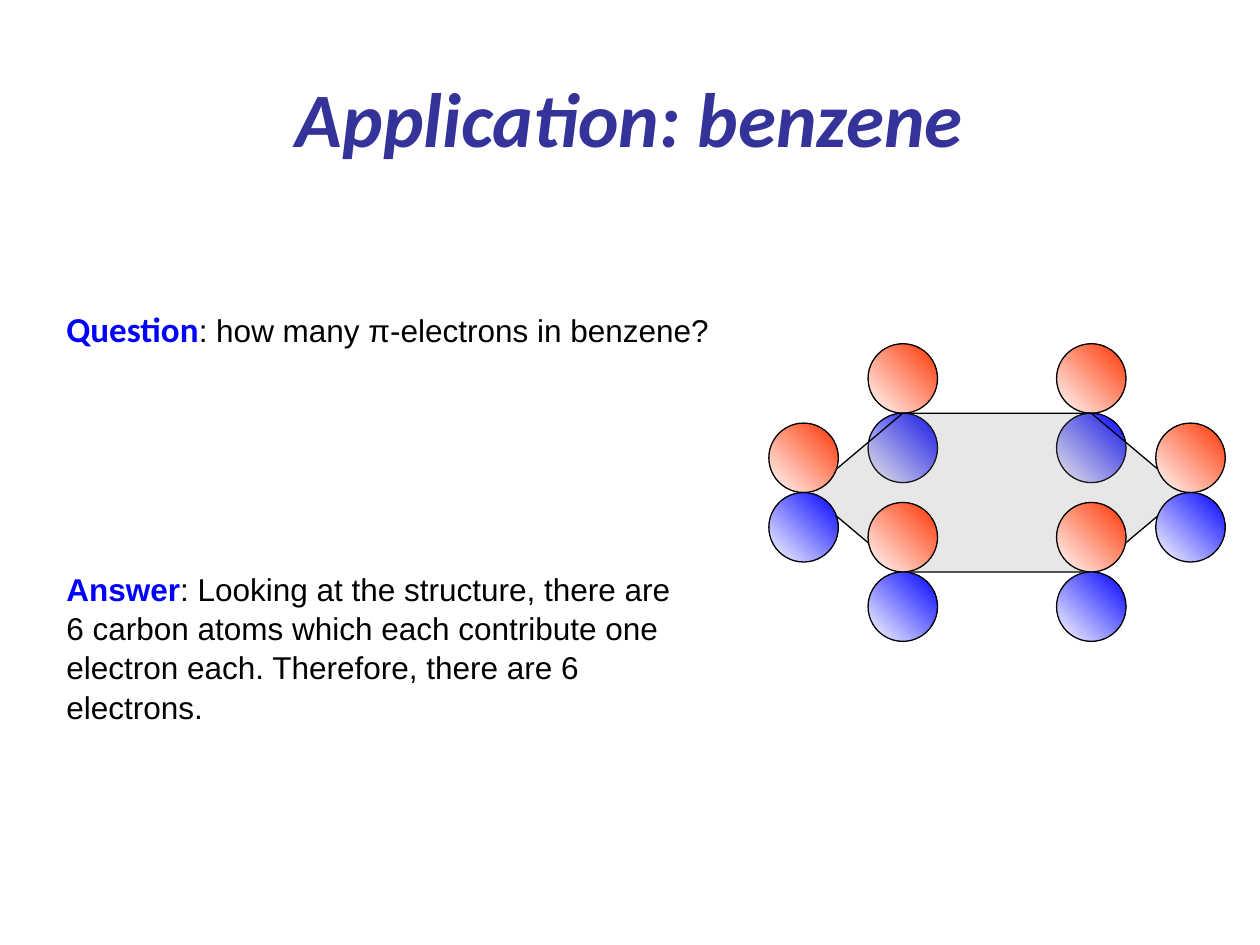
from pptx import Presentation
from pptx.dml.color import RGBColor as RGB
from pptx.enum.shapes import MSO_SHAPE as Shape
from pptx.enum.text import MSO_ANCHOR as Anchor, PP_ALIGN as Align
from pptx.oxml.ns import qn
from pptx.util import Cm, Pt
from lxml.etree import SubElement

HUES = {"title": "333399", "key": "0000FF", "text": "000000", "line": "000000",
        "pale": "FFFFFF", "red": "FF3300", "blue": "0000FF", "ring": "808080"}
HEAD = dict(name="Calibri", size=Pt(44), bold=True, italic=True)
BODY = dict(name="Arial", size=Pt(18), bold=False)
BOLD = dict(BODY, bold=True)
LEAD = dict(name="Calibri", size=Pt(20), bold=True)
LOBE = 1.4


def hue(name):
    return RGB.from_string(HUES[name])


def add_text(slide, box, runs, align=Align.LEFT, anchor=Anchor.TOP, space=1.0):
    """Place one paragraph; each run is (words, colour name, font format)."""
    frame = slide.shapes.add_textbox(*map(Cm, box)).text_frame
    frame.word_wrap = True
    frame.vertical_anchor = anchor
    para = frame.paragraphs[0]
    para.alignment = align
    para.line_spacing = space
    for words, tint, style in runs:
        run = para.add_run()
        run.text = words
        run.font.color.rgb = hue(tint)
        for key, value in style.items():
            setattr(run.font, key, value)


def add_form(parent, kind, box):
    form = parent.add_shape(kind, *map(Cm, box))
    form.shadow.inherit = False
    form.line.color.rgb = hue("line")
    form.line.width = Pt(0.75)
    return form


def add_orbital(slide, x, y):
    """Stack a red lobe on a blue one, touching at the atom (x, y)."""
    group = slide.shapes.add_group_shape()
    for tint, top in (("red", y - LOBE), ("blue", y)):
        lobe = add_form(group.shapes, Shape.OVAL, (x - LOBE / 2, top, LOBE, LOBE))
        lobe.fill.gradient()
        lobe.fill.gradient_angle = 45
        for stop, name in zip(lobe.fill.gradient_stops, ("pale", tint)):
            stop.color.rgb = hue(name)


def add_ring(slide, box):
    left, top, width, height = box
    ring = add_form(slide.shapes, Shape.HEXAGON, box)
    ring.adjustments[0] = 0.594
    ring.adjustments[1] = 1.155
    ring.fill.solid()
    ring.fill.fore_color.rgb = hue("ring")
    tint = ring.fill._xPr.find(qn("a:solidFill"))[0]
    SubElement(tint, qn("a:alpha"), val="19000")


def add_benzene(slide, box):
    """Draw the ring with an orbital on each corner, back ones behind it."""
    left, top, width, height = box
    inset, jut = 1.9, 0.1
    inner = (left + inset, left + width - inset)
    outer = (left - jut, left + width + jut)
    for x in inner:
        add_orbital(slide, x, top)
    add_ring(slide, box)
    for x in outer:
        add_orbital(slide, x, top + height / 2)
    for x in inner:
        add_orbital(slide, x, top + height)


def main():
    deck = Presentation()
    deck.slide_width, deck.slide_height = Cm(25.4), Cm(19.05)
    slide = deck.slides.add_slide(deck.slide_layouts[6])
    add_text(slide, (1.27, 0.76, 22.86, 3.18),
             [("Application: benzene", "title", HEAD)], Align.CENTER, Anchor.MIDDLE)
    add_text(slide, (1.09, 6.07, 13.67, 1.85),
             [("Question", "key", LEAD),
              (": how many π-electrons in benzene?", "text", BODY)])
    add_text(slide, (1.09, 11.33, 13.2, 4.06),
             [("Answer", "key", BOLD),
              (": Looking at the structure, there are 6 carbon atoms which each "
               "contribute one electron each. Therefore, there are 6 electrons.",
               "text", BODY)], space=1.04)
    add_benzene(slide, (16.3, 8.33, 7.6, 3.2))
    deck.save("out.pptx")


if __name__ == "__main__":
    main()
